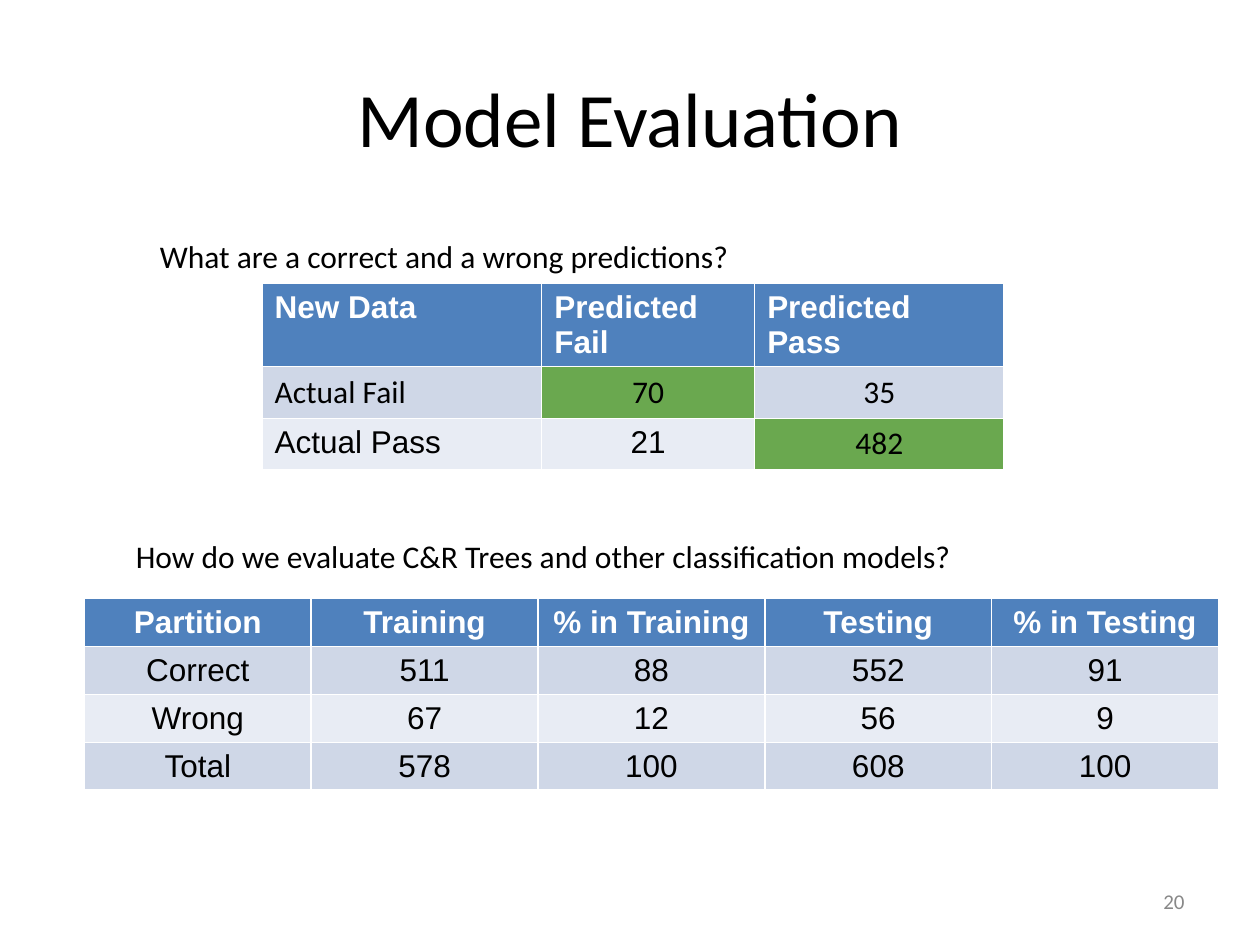
from dataclasses import dataclass, field

from pptx import Presentation
from pptx.dml.color import RGBColor
from pptx.enum.text import MSO_ANCHOR, PP_ALIGN
from pptx.util import Inches, Pt

HEADER_FILL = "4F81BD"
BAND_FILLS = ("CFD7E7", "E8ECF4")
CORRECT_FILL = "6AA84F"
BLACK, WHITE, GREY = "000000", "FFFFFF", "888888"


@dataclass
class Label:
    text: str
    place: tuple[float, float, float, float]
    size: int = 18
    color: str = BLACK
    align: PP_ALIGN = PP_ALIGN.LEFT
    anchor: MSO_ANCHOR = MSO_ANCHOR.TOP


@dataclass
class Grid:
    left: float
    top: float
    widths: list[float]
    row_height: float
    rows: list[list[str]]
    centered_labels: bool = True
    # Cells, as (row, column), that differ from the rest of the grid
    green: set[tuple[int, int]] = field(default_factory=set)
    calibri: set[tuple[int, int]] = field(default_factory=set)


LABELS = [
    Label("What are a correct and a wrong predictions?", (1.17, 1.83, 4.79, 0.4)),
    Label("How do we evaluate C&R Trees and other classification models?",
          (0.98, 4.21, 6.75, 0.4)),
    Label("20", (7.17, 6.95, 2.33, 0.4), 12, GREY, PP_ALIGN.RIGHT, MSO_ANCHOR.MIDDLE),
]

CONFUSION_MATRIX = Grid(
    2.08, 2.25, [2.22, 1.69, 1.98], 0.41,
    [["New Data", "Predicted Fail", "Predicted Pass"],
     ["Actual Fail", "70", "35"],
     ["Actual Pass", "21", "482"]],
    centered_labels=False,
    green={(1, 1), (2, 2)},
    calibri={(1, 0), (1, 1), (1, 2), (2, 2)},
)

PARTITION_RESULTS = Grid(
    0.67, 4.75, [1.8] * 5, 0.36,
    [["Partition", "Training", "% in Training", "Testing", "% in Testing"],
     ["Correct", "511", "88", "552", "91"],
     ["Wrong", "67", "12", "56", "9"],
     ["Total", "578", "100", "608", "100"]],
)


def rgb(color: str) -> RGBColor:
    return RGBColor.from_string(color)


def write(frame, text: str, color: str, align: PP_ALIGN, **font_format) -> None:
    para = frame.paragraphs[0]
    para.alignment = align
    span = para.add_run()
    span.text = text
    for name, value in font_format.items():
        setattr(span.font, name, value)
    span.font.color.rgb = rgb(color)


def add_title(page, text: str) -> None:
    title = page.shapes.title
    place = {"left": 0.5, "top": 0.3, "width": 9, "height": 1.25}
    for name, value in place.items():
        setattr(title, name, Inches(value))
    title.text_frame.vertical_anchor = MSO_ANCHOR.MIDDLE
    write(title.text_frame, text, BLACK, PP_ALIGN.CENTER, name="Calibri", size=Pt(44))


def add_label(page, label: Label) -> None:
    box = page.shapes.add_textbox(*map(Inches, label.place))
    frame = box.text_frame
    frame.word_wrap = True
    frame.vertical_anchor = label.anchor
    write(frame, label.text, label.color, label.align,
          name="Calibri", size=Pt(label.size))


def add_grid(page, grid: Grid) -> None:
    row_count = len(grid.rows)
    table = page.shapes.add_table(
        row_count, len(grid.widths), Inches(grid.left), Inches(grid.top),
        Inches(sum(grid.widths)), Inches(grid.row_height * row_count)).table
    for column, width in zip(table.columns, grid.widths):
        column.width = Inches(width)
    for row_index, texts in enumerate(grid.rows):
        table.rows[row_index].height = Inches(grid.row_height)
        is_header = row_index == 0
        row_fill = HEADER_FILL if is_header else BAND_FILLS[(row_index - 1) % 2]
        for column_index, text in enumerate(texts):
            position = (row_index, column_index)
            cell = table.cell(*position)
            cell.fill.solid()
            cell.fill.fore_color.rgb = rgb(
                CORRECT_FILL if position in grid.green else row_fill)
            is_label = is_header or column_index == 0
            centered = grid.centered_labels or not is_label
            write(cell.text_frame, text, WHITE if is_header else BLACK,
                  PP_ALIGN.CENTER if centered else PP_ALIGN.LEFT,
                  name="Calibri" if position in grid.calibri else "Arial",
                  size=Pt(18), bold=is_header)


def main() -> None:
    deck = Presentation()
    deck.slide_width, deck.slide_height = Inches(10), Inches(7.5)
    page = deck.slides.add_slide(deck.slide_layouts[5])

    add_title(page, "Model Evaluation")
    # Tables
    for grid in (PARTITION_RESULTS, CONFUSION_MATRIX):
        add_grid(page, grid)
    # Questions above the tables, and the page number
    for label in LABELS:
        add_label(page, label)

    deck.save("out.pptx")


if __name__ == "__main__":
    main()
